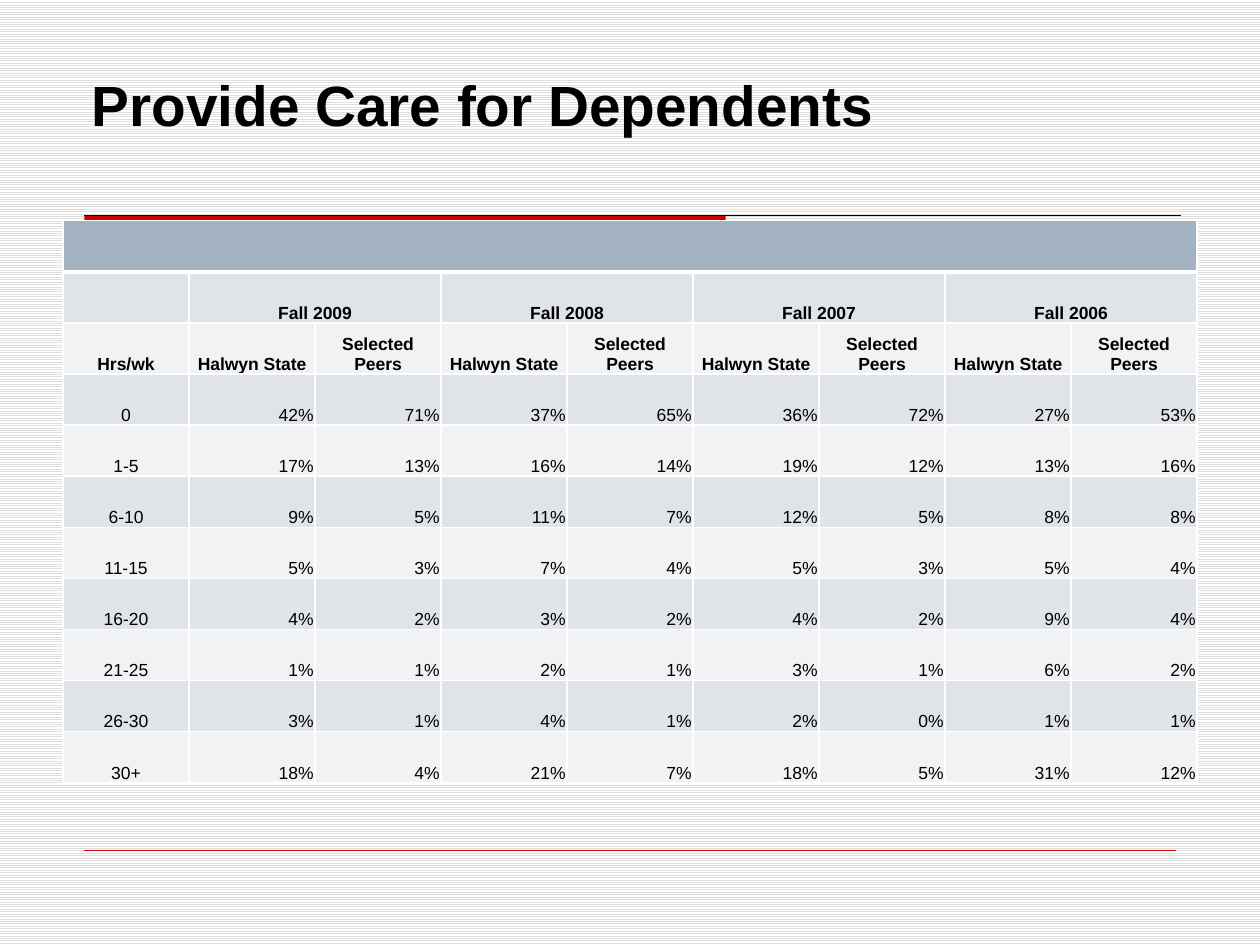
from dataclasses import dataclass

from lxml import etree
from pptx import Presentation
from pptx.dml.color import RGBColor
from pptx.enum.dml import MSO_PATTERN
from pptx.enum.shapes import MSO_CONNECTOR, MSO_SHAPE
from pptx.enum.text import MSO_ANCHOR, MSO_AUTO_SIZE, PP_ALIGN
from pptx.oxml import parse_xml
from pptx.oxml.ns import nsdecls, qn
from pptx.util import Cm, Pt

STRAIGHT = MSO_CONNECTOR.STRAIGHT
RECTANGLE = MSO_SHAPE.RECTANGLE
LIGHT_HORIZONTAL = MSO_PATTERN.LIGHT_HORIZONTAL
BOTTOM = MSO_ANCHOR.BOTTOM
NO_AUTOFIT = MSO_AUTO_SIZE.NONE
LEFT, CENTER, RIGHT = PP_ALIGN.LEFT, PP_ALIGN.CENTER, PP_ALIGN.RIGHT


@dataclass(frozen=True)
class Theme:
    font: str = "Arial"
    title_size: float = 32.4
    table_size: float = 10
    text: str = "000000"
    accent: str = "CC0000"
    paper: str = "FFFFFF"
    stripe: str = "DDDDDD"
    banner: str = "A3B2C1"
    dark_band: str = "E0E4E9"
    light_band: str = "F0F2F4"


theme = Theme()


def style_text(paragraph, size, bold, alignment):
    paragraph.alignment = alignment
    for run in paragraph.runs:
        run.font.name = theme.font
        run.font.size = Pt(size)
        run.font.bold = bold
        run.font.color.rgb = RGBColor.from_string(theme.text)


def add_rule(left, right, y, color, width):
    rule = slide.shapes.add_connector(STRAIGHT, Cm(left), Cm(y), Cm(right), Cm(y))
    rule.line.color.rgb = RGBColor.from_string(color)
    rule.line.width = Pt(width)
    etree.SubElement(rule._element.spPr, qn("a:effectLst"))


prs = Presentation()
prs.slide_width, prs.slide_height = Cm(25.4), Cm(19.05)
slide = prs.slides.add_slide(prs.slide_layouts[5])

backdrop = slide.background.fill
backdrop.patterned()
backdrop.pattern = LIGHT_HORIZONTAL
backdrop.fore_color.rgb = RGBColor.from_string(theme.stripe)
backdrop.back_color.rgb = RGBColor.from_string(theme.paper)

title = slide.shapes.title
title.left, title.top, title.width, title.height = Cm(1.6), Cm(0.84), Cm(22.23), Cm(3.38)
heading = title.text_frame
heading.text = "Provide Care for Dependents"
heading.auto_size = NO_AUTOFIT
heading.vertical_anchor = BOTTOM
heading.margin_bottom = Cm(1.45)
style_text(heading.paragraphs[0], theme.title_size, True, LEFT)

accent_bar = slide.shapes.add_shape(RECTANGLE, Cm(1.7), Cm(4.34), Cm(12.93), Cm(0.3))
accent_bar.shadow.inherit = False
accent_bar.fill.solid()
accent_bar.fill.fore_color.rgb = RGBColor.from_string(theme.accent)
accent_bar.line.fill.background()
add_rule(1.7, 23.8, 4.34, theme.text, 0.75)
add_rule(1.7, 23.7, 17.15, theme.accent, 0.25)

terms = ["Fall 2009", "Fall 2008", "Fall 2007", "Fall 2006"]
groups = ["Halwyn State", "Selected Peers"]
hours_shares = [
    ("0", 42, 71, 37, 65, 36, 72, 27, 53),
    ("1-5", 17, 13, 16, 14, 19, 12, 13, 16),
    ("6-10", 9, 5, 11, 7, 12, 5, 8, 8),
    ("11-15", 5, 3, 7, 4, 5, 3, 5, 4),
    ("16-20", 4, 2, 3, 2, 4, 2, 9, 4),
    ("21-25", 1, 1, 2, 1, 3, 1, 6, 2),
    ("26-30", 3, 1, 4, 1, 2, 0, 1, 1),
    ("30+", 18, 4, 21, 7, 18, 5, 31, 12),
]
term_row = [""]
for term in terms:
    term_row += [term, ""]
table_rows = [[""] * 9, term_row, ["Hrs/wk"] + groups * len(terms)]
for hours, *shares in hours_shares:
    table_rows.append([hours] + [f"{share}%" for share in shares])

row_height = 1.03
care_table = slide.shapes.add_table(
    len(table_rows), 9, Cm(1.27), Cm(4.45), Cm(22.86), Cm(row_height * len(table_rows))
).table
care_table.horz_banding = False
care_table.first_row = False
for column in care_table.columns:
    column.width = Cm(2.54)

for r, row_texts in enumerate(table_rows):
    care_table.rows[r].height = Cm(row_height)
    band = theme.banner if r == 0 else theme.dark_band if r % 2 else theme.light_band
    for c, cell_text in enumerate(row_texts):
        cell = care_table.cell(r, c)
        cell.fill.solid()
        cell.fill.fore_color.rgb = RGBColor.from_string(band)
        cell.vertical_anchor = BOTTOM
        cell.margin_left = cell.margin_right = cell.margin_top = Cm(0.03)
        cell.margin_bottom = 0
        cell.text_frame.text = cell_text
        alignment = RIGHT if r > 2 and c > 0 else CENTER
        style_text(cell.text_frame.paragraphs[0], theme.table_size, r < 3, alignment)
        cell_properties = cell._tc.get_or_add_tcPr()
        for position, side in enumerate(["lnL", "lnR", "lnT", "lnB"]):
            width = Pt(3 if r == 0 and side == "lnB" else 1)
            cell_properties.insert(position, parse_xml(
                f'<a:{side} {nsdecls("a")} w="{width}"><a:solidFill>'
                f'<a:srgbClr val="{theme.paper}"/></a:solidFill></a:{side}>'
            ))

care_table.cell(0, 0).merge(care_table.cell(0, 8))
for c in range(1, 9, 2):
    care_table.cell(1, c).merge(care_table.cell(1, c + 1))

prs.save("out.pptx")
